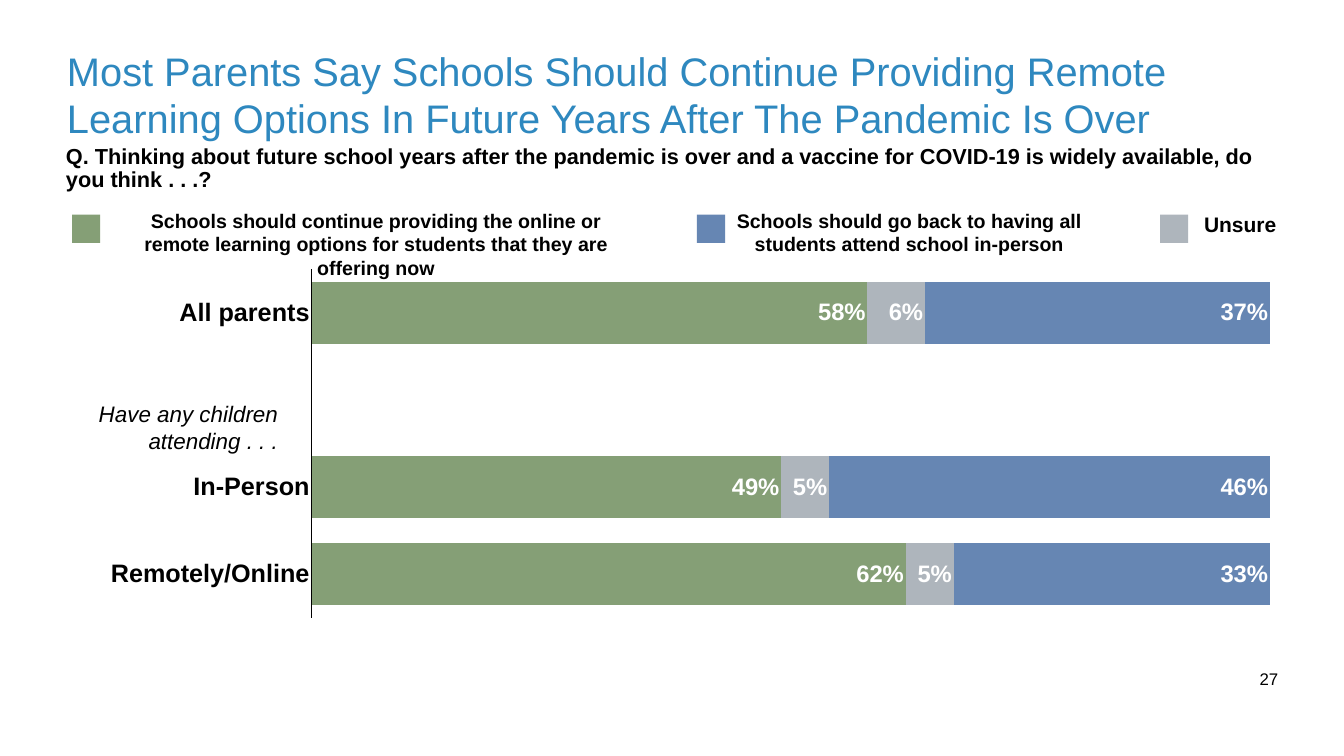
"""Build a slide with a stacked bar chart of parents' views on remote learning."""
from lxml.etree import SubElement
from pptx import Presentation
from pptx.chart.data import CategoryChartData
from pptx.dml.color import RGBColor
from pptx.enum.chart import XL_CHART_TYPE, XL_LABEL_POSITION, XL_TICK_LABEL_POSITION, XL_TICK_MARK
from pptx.enum.shapes import MSO_SHAPE
from pptx.enum.text import MSO_ANCHOR, PP_ALIGN
from pptx.oxml.ns import qn
from pptx.util import Inches, Pt

FONT = "Arial"
BLACK, WHITE, TITLE_BLUE = "000000", "FFFFFF", "2E88BF"
GREEN, GRAY, BLUE = "859F76", "AEB5BC", "6686B3"

TITLE = ("Most Parents Say Schools Should Continue Providing Remote "
         "Learning Options In Future Years After The Pandemic Is Over")
QUESTION = ("Q. Thinking about future school years after the pandemic is over "
            "and a vaccine for COVID-19 is widely available, do you think . . .?")
SUBGROUP = ["Have any children", "attending . . ."]
PAGE_NUMBER = "27"

LEGEND = [
    ("Schools should continue providing the online or remote learning options "
     "for students that they are offering now", GREEN, 1.43, (2.23, 4.06, 10.46, 1.07), 28),
    ("Schools should go back to having all students attend school in-person",
     BLUE, 13.83, (14.47, 4.06, 7.14, 1.07), 28),
    ("Unsure", GRAY, 23.02, (22.1, 4.11, 5.02, 0.66), 30),
]
SWATCH_TOP, SWATCH_SIZE = 4.26, 0.56

GROUPS = ["All parents", "", "In-Person", "Remotely/Online"]
ANSWERS = [
    ("Continue remote options", GREEN, (0.58, None, 0.49, 0.62)),
    ("Unsure", GRAY, (0.06, None, 0.05, 0.05)),
    ("Go back in-person", BLUE, (0.37, None, 0.46, 0.33)),
]
PLOT_AREA = {"x": 0.204, "y": 0.074, "w": 0.791, "h": 0.88}


def rgb(color):
    return RGBColor.from_string(color)


def style_font(font, size, color=BLACK, bold=False, italic=False):
    font.name, font.size, font.bold, font.italic = FONT, Pt(size), bold, italic
    font.color.rgb = rgb(color)


def add_text(slide, box, lines, size, align=PP_ALIGN.LEFT, anchor=MSO_ANCHOR.TOP,
             spacing=None, **style):
    frame = slide.shapes.add_textbox(*map(Inches, box)).text_frame
    frame.word_wrap, frame.vertical_anchor = True, anchor
    frame.margin_left = frame.margin_right = Inches(0.08)
    frame.margin_top = frame.margin_bottom = Inches(0.08)
    frame.text = "\n".join(lines)
    for paragraph in frame.paragraphs:
        paragraph.alignment, paragraph.line_spacing = align, spacing
        style_font(paragraph.font, size, **style)


def add_swatch(slide, left, color):
    swatch = slide.shapes.add_shape(
        MSO_SHAPE.RECTANGLE, *map(Inches, (left, SWATCH_TOP, SWATCH_SIZE, SWATCH_SIZE)))
    swatch.shadow.inherit = False
    swatch.fill.solid()
    swatch.fill.fore_color.rgb = rgb(color)
    swatch.line.fill.background()


def set_plot_area(chart):
    plot_area = chart.plots[0]._element.getparent()
    layout = plot_area.find(qn("c:layout"))
    if layout is None:
        layout = SubElement(plot_area, qn("c:layout"))
        plot_area.insert(0, layout)
    manual = SubElement(layout, qn("c:manualLayout"))
    settings = {"layoutTarget": "inner", "xMode": "edge", "yMode": "edge", **PLOT_AREA}
    for name, value in settings.items():
        SubElement(manual, qn(f"c:{name}")).set("val", str(value))


def add_answer_chart(slide):
    data = CategoryChartData(number_format="0%")
    data.categories = GROUPS
    for name, _, shares in ANSWERS:
        data.add_series(name, shares)
    chart = slide.shapes.add_chart(
        XL_CHART_TYPE.BAR_STACKED, *map(Inches, (1.28, 4.76, 24.04, 7.86)), data).chart
    chart.has_legend = chart.has_title = False
    style_font(chart.font, 10)
    set_plot_area(chart)

    plot = chart.plots[0]
    plot.gap_width, plot.overlap, plot.vary_by_categories = 40, 100, False
    for series, (_, color, _) in zip(plot.series, ANSWERS):
        series.format.fill.solid()
        series.format.fill.fore_color.rgb = rgb(color)
        labels = series.data_labels
        labels.show_value = True
        labels.position = XL_LABEL_POSITION.INSIDE_END
        labels.number_format, labels.number_format_is_linked = "#,##0%", False
        style_font(labels.font, 34, WHITE, bold=True)

    groups, shares = chart.category_axis, chart.value_axis
    for axis in (groups, shares):
        axis.major_tick_mark = axis.minor_tick_mark = XL_TICK_MARK.NONE
        axis.has_major_gridlines = False
    groups.reverse_order = True
    style_font(groups.tick_labels.font, 36, bold=True)
    groups.format.line.color.rgb = rgb(BLACK)
    groups.format.line.width = Pt(1)
    shares.minimum_scale, shares.maximum_scale, shares.major_unit = 0, 1, 0.25
    shares.tick_label_position = XL_TICK_LABEL_POSITION.NONE
    shares.format.line.fill.background()


def main():
    deck = Presentation()
    deck.slide_width, deck.slide_height = Inches(26.67), Inches(15)
    slide = deck.slides.add_slide(deck.slide_layouts[6])
    add_text(slide, (1.25, 0.84, 24.17, 2.08), [TITLE], 56.9, color=TITLE_BLUE)
    add_text(slide, (24.78, 13.19, 0.8, 0.56), [PAGE_NUMBER], 24, align=PP_ALIGN.CENTER)
    add_answer_chart(slide)
    for label, color, swatch_left, label_box, size in LEGEND:
        add_text(slide, label_box, [label], size, align=PP_ALIGN.CENTER, bold=True)
        add_swatch(slide, swatch_left, color)
    add_text(slide, (1.23, 2.81, 24.17, 1.18), [QUESTION], 31, spacing=0.9, bold=True)
    add_text(slide, (1.6, 7.85, 4, 1.24), SUBGROUP, 32, align=PP_ALIGN.RIGHT,
             anchor=MSO_ANCHOR.MIDDLE, italic=True)
    deck.save("out.pptx")


if __name__ == "__main__":
    main()
